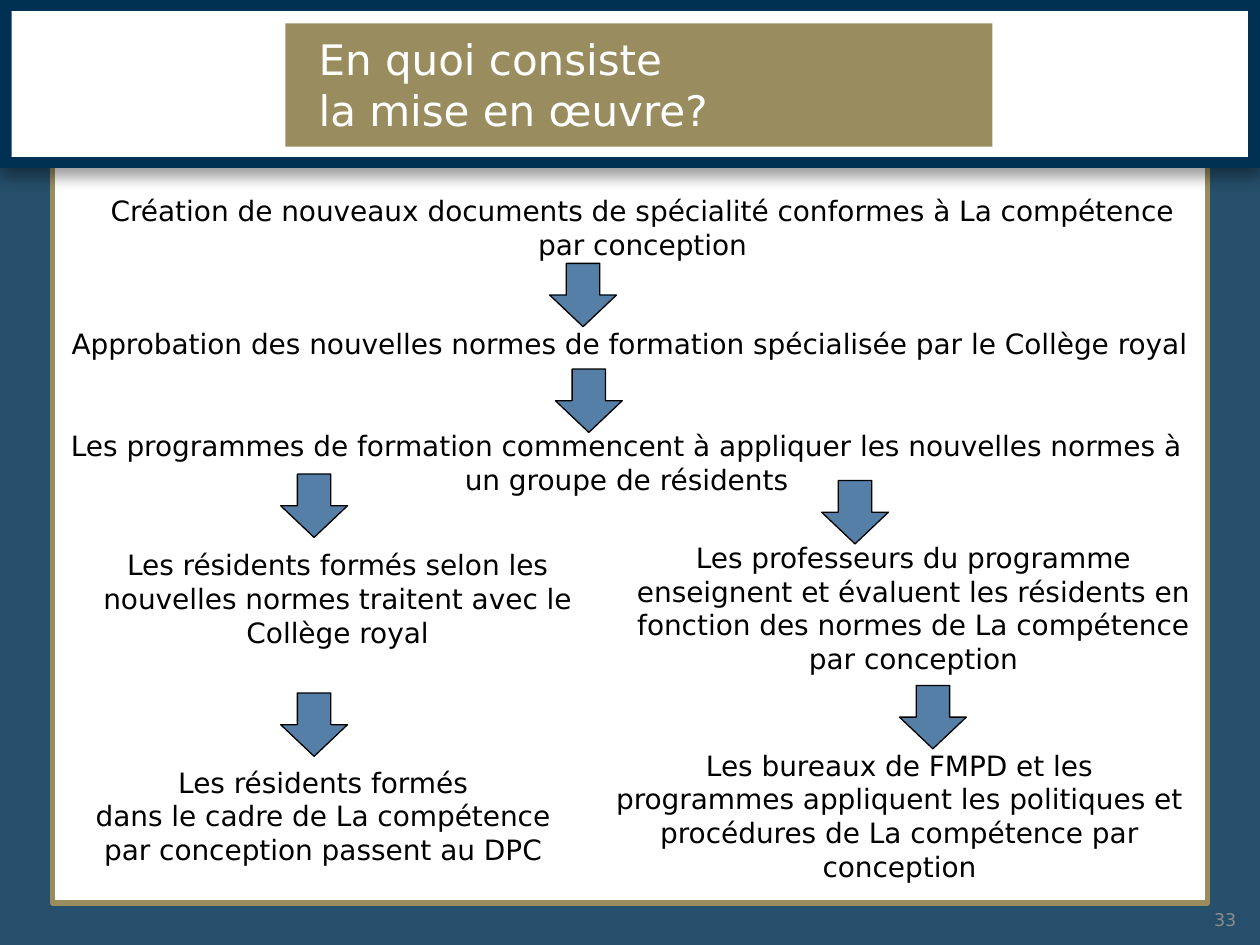
"""Build the slide on how the new training standards are put into practice."""
import pptx
import pptx.util
import pptx.dml.color
import pptx.enum.shapes
import pptx.enum.text
import pptx.oxml
import pptx.oxml.ns
from lxml import etree

Pt = pptx.util.Pt
MSO_SHAPE = pptx.enum.shapes.MSO_SHAPE
ALIGN = pptx.enum.text.PP_ALIGN
ANCHOR = pptx.enum.text.MSO_ANCHOR

FONT = "DejaVu Sans"
COLOURS = {
    "navy": "003152", "white": "FFFFFF", "gold": "998D5F",
    "arrow": "557FA6", "black": "000000", "grey": "8C8C8C",
}
WIDTH, HEIGHT, HEADER_HEIGHT = 720, 540, 96
ARROW_SIZE = (38.2, 36.2)

TITLE = "En quoi consiste\vla mise en œuvre?"
PAGE_NUMBER = "33"
STEPS = [
    (["Création de nouveaux documents de spécialité conformes à La compétence par conception"],
     (41.8, 107.3, 650.9, 46), True),
    (["Approbation des nouvelles normes de formation spécialisée par le Collège royal"],
     (31.7, 183.2, 656.6, 26.6), False),
    (["Les programmes de formation commencent à appliquer les nouvelles normes à un groupe de résidents"],
     (28, 241.3, 660.2, 46), True),
    (["Les résidents formés selon les nouvelles normes traitent avec le Collège royal"],
     (41.8, 309.6, 302.4, 65.5), True),
    (["Les résidents formés",
      "dans le cadre de La compétence par conception passent au DPC"],
     (41.8, 433.8, 285.8, 65.5), True),
    (["Les professeurs du programme enseignent et évaluent les résidents en fonction des normes "
      "de La compétence par conception"],
     (352.1, 305.4, 339.8, 85), True),
    (["Les bureaux de FMPD et les",
      "programmes appliquent les politiques et procédures de La compétence par conception"],
     (336.2, 424.1, 355.7, 85), True),
]
ARROW_CORNERS = [
    (314.1, 150.5), (514, 391.7), (160.4, 396),
    (317.4, 210.9), (160.4, 270.9), (469.5, 274.6),
]


def colour(name):
    return pptx.dml.color.RGBColor.from_string(COLOURS[name])


def add_block(slide, box, fill, line=None, line_width=0, kind=MSO_SHAPE.RECTANGLE):
    block = slide.shapes.add_shape(kind, *map(Pt, box))
    block.fill.solid()
    block.fill.fore_color.rgb = colour(fill)
    if line:
        block.line.color.rgb = colour(line)
        block.line.width = Pt(line_width)
    else:
        block.line.fill.background()
    block.shadow.inherit = False
    return block


def add_text(slide, box, paragraphs, size, ink, align, anchor=ANCHOR.TOP, wrap=True):
    frame = slide.shapes.add_textbox(*map(Pt, box)).text_frame
    frame.word_wrap = wrap
    frame.vertical_anchor = anchor
    frame.text = "\n".join(paragraphs)
    for paragraph in frame.paragraphs:
        paragraph.alignment = align
        paragraph.font.name = FONT
        paragraph.font.size = Pt(size)
        paragraph.font.color.rgb = colour(ink)


def set_transparency(block, percent):
    tint = block.fill._xPr.find(".//" + pptx.oxml.ns.qn("a:srgbClr"))
    etree.SubElement(tint, pptx.oxml.ns.qn("a:alpha"), val=str(percent * 1000))


def cast_shadow(block):
    effects = block._element.spPr.find(pptx.oxml.ns.qn("a:effectLst"))
    effects.append(pptx.oxml.parse_xml(
        f'<a:outerShdw {pptx.oxml.ns.nsdecls("a")} blurRad="{Pt(8.8)}" dist="{Pt(4)}" '
        f'dir="5400000" algn="t" rotWithShape="0"><a:srgbClr val="{COLOURS["black"]}">'
        '<a:alpha val="40000"/></a:srgbClr></a:outerShdw>'))


def main():
    deck = pptx.Presentation()
    deck.slide_width, deck.slide_height = Pt(WIDTH), Pt(HEIGHT)
    slide = deck.slides.add_slide(deck.slide_layouts[6])

    backdrop = add_block(slide, (0, HEADER_HEIGHT, WIDTH, HEIGHT - HEADER_HEIGHT), "navy")
    set_transparency(backdrop, 85)
    add_block(slide, (30, 80.5, 660, 435.5), "white", "gold", 3)
    header = add_block(slide, (0, 0, WIDTH, HEADER_HEIGHT), "navy")
    cast_shadow(header)
    add_block(slide, (6.7, 6.3, 706.4, 83.3), "white")
    add_block(slide, (163.1, 13.4, 404, 70.4), "gold")

    add_text(slide, (175, 15.1, 398.9, 66.2), [TITLE], 24, "white", ALIGN.LEFT, ANCHOR.MIDDLE)
    add_text(slide, (467.3, 511.2, 246.2, 28.8), [PAGE_NUMBER], 10, "grey",
             ALIGN.RIGHT, ANCHOR.MIDDLE)
    for paragraphs, box, wrap in STEPS:
        add_text(slide, box, paragraphs, 16, "black", ALIGN.CENTER, wrap=wrap)
    for corner in ARROW_CORNERS:
        add_block(slide, corner + ARROW_SIZE, "arrow", "black", 0.75, MSO_SHAPE.DOWN_ARROW)

    deck.save("out.pptx")


if __name__ == "__main__":
    main()
